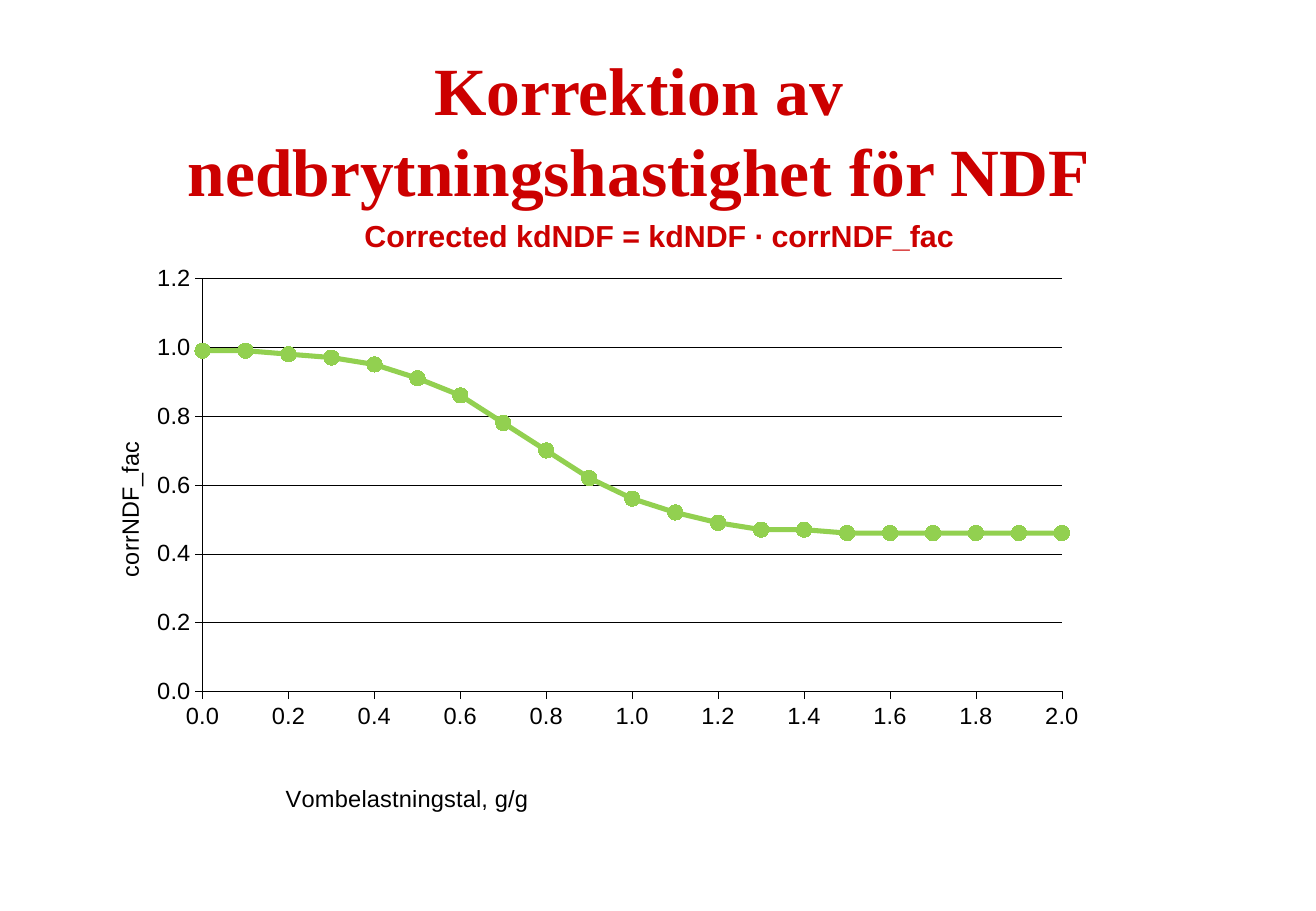
from lxml.etree import SubElement
from pptx import Presentation
from pptx.chart.data import XyChartData
from pptx.dml.color import RGBColor
from pptx.enum.chart import XL_CHART_TYPE, XL_MARKER_STYLE, XL_TICK_MARK
from pptx.enum.text import MSO_ANCHOR, PP_ALIGN
from pptx.oxml.ns import qn
from pptx.util import Inches, Pt

COLORS = {"heading": "CC0000", "curve": "92D050", "axis": "000000"}
FACTORS = [0.99, 0.99, 0.98, 0.97, 0.95, 0.91, 0.86, 0.78, 0.7, 0.62, 0.56,
           0.52, 0.49, 0.47, 0.47, 0.46, 0.46, 0.46, 0.46, 0.46, 0.46]


def rgb(name):
    return RGBColor.from_string(COLORS[name])


def style_font(font, family, size, color, bold=False):
    font.name = family
    font.size = Pt(size)
    font.bold = bold
    font.color.rgb = rgb(color)


def style_line(line, color, width):
    line.color.rgb = rgb(color)
    line.width = Pt(width)


def add_heading(slide, text, box, family, size, align):
    frame = slide.shapes.add_textbox(*map(Inches, box)).text_frame
    frame.word_wrap = True
    frame.vertical_anchor = MSO_ANCHOR.MIDDLE
    paragraph = frame.paragraphs[0]
    paragraph.text = text
    paragraph.alignment = align
    style_font(paragraph.font, family, size, "heading", bold=True)


def set_layout(parent, index, **settings):
    for old in parent.findall(qn("c:layout")):
        parent.remove(old)
    layout = SubElement(parent, qn("c:layout"))
    manual = SubElement(layout, qn("c:manualLayout"))
    for tag, value in settings.items():
        SubElement(manual, qn(f"c:{tag}")).set("val", str(value))
    parent.insert(index, layout)


def style_axis(axis, title, number_format, maximum, x, y, rotation):
    axis.minimum_scale = 0
    axis.maximum_scale = maximum
    axis.major_unit = 0.2
    axis.major_tick_mark = XL_TICK_MARK.OUTSIDE
    axis.minor_tick_mark = XL_TICK_MARK.NONE
    axis.tick_labels.number_format = number_format
    axis.tick_labels.number_format_is_linked = False
    style_font(axis.tick_labels.font, "Arial", 14, "axis")
    style_line(axis.format.line, "axis", 0.25)
    frame = axis.axis_title.text_frame
    frame.text = title
    style_font(frame.paragraphs[0].font, "Arial", 14, "axis")
    frame._txBody.find(qn("a:bodyPr")).set("rot", str(rotation))
    set_layout(axis.axis_title._element, 1, xMode="edge", yMode="edge", x=x, y=y)


def add_correction_chart(slide):
    data = XyChartData()
    correction = data.add_series("corrNDF_fac")
    for step, factor in enumerate(FACTORS):
        correction.add_data_point(step / 10, factor)
    box = map(Inches, (0.72, 1.94, 9.38, 4.81))
    chart = slide.shapes.add_chart(XL_CHART_TYPE.XY_SCATTER_LINES, *box, data).chart
    chart.has_title = False
    chart.has_legend = False
    style_font(chart.font, "Arial", 14, "axis")

    load_axis, factor_axis = chart.category_axis, chart.value_axis
    style_axis(load_axis, "Vombelastningstal, g/g", "#,##0.0", 2, 0.17, 0.94, 0)
    style_axis(factor_axis, "corrNDF_fac", "0.0", 1.2, 0.02, 0.35, -5400000)
    load_axis.has_major_gridlines = False
    factor_axis.has_major_gridlines = True
    style_line(factor_axis.major_gridlines.format.line, "axis", 0.25)
    set_layout(load_axis._element.getparent(), 0, layoutTarget="inner",
               xMode="edge", yMode="edge", x=0.101, y=0.074, w=0.754, h=0.714)

    plot = chart.plots[0]
    plot.vary_by_categories = False
    curve = plot.series[0]
    curve.smooth = False
    style_line(curve.format.line, "curve", 3)
    curve.marker.style = XL_MARKER_STYLE.CIRCLE
    curve.marker.size = 9
    curve.marker.format.fill.solid()
    curve.marker.format.fill.fore_color.rgb = rgb("curve")
    curve.marker.format.line.color.rgb = rgb("curve")


def main():
    deck = Presentation()
    deck.slide_width = Inches(10.83)
    deck.slide_height = Inches(7.5)
    slide = deck.slides.add_slide(deck.slide_layouts[6])
    add_heading(slide, "Korrektion av nedbrytningshastighet för NDF",
                (1.08, 0.6, 8.35, 0.93), "Times New Roman", 40, PP_ALIGN.CENTER)
    add_correction_chart(slide)
    add_heading(slide, "Corrected kdNDF = kdNDF ∙ corrNDF_fac",
                (2.9, 1.74, 5.59, 0.4), "Arial", 18, PP_ALIGN.LEFT)
    deck.save("out.pptx")


if __name__ == "__main__":
    main()
